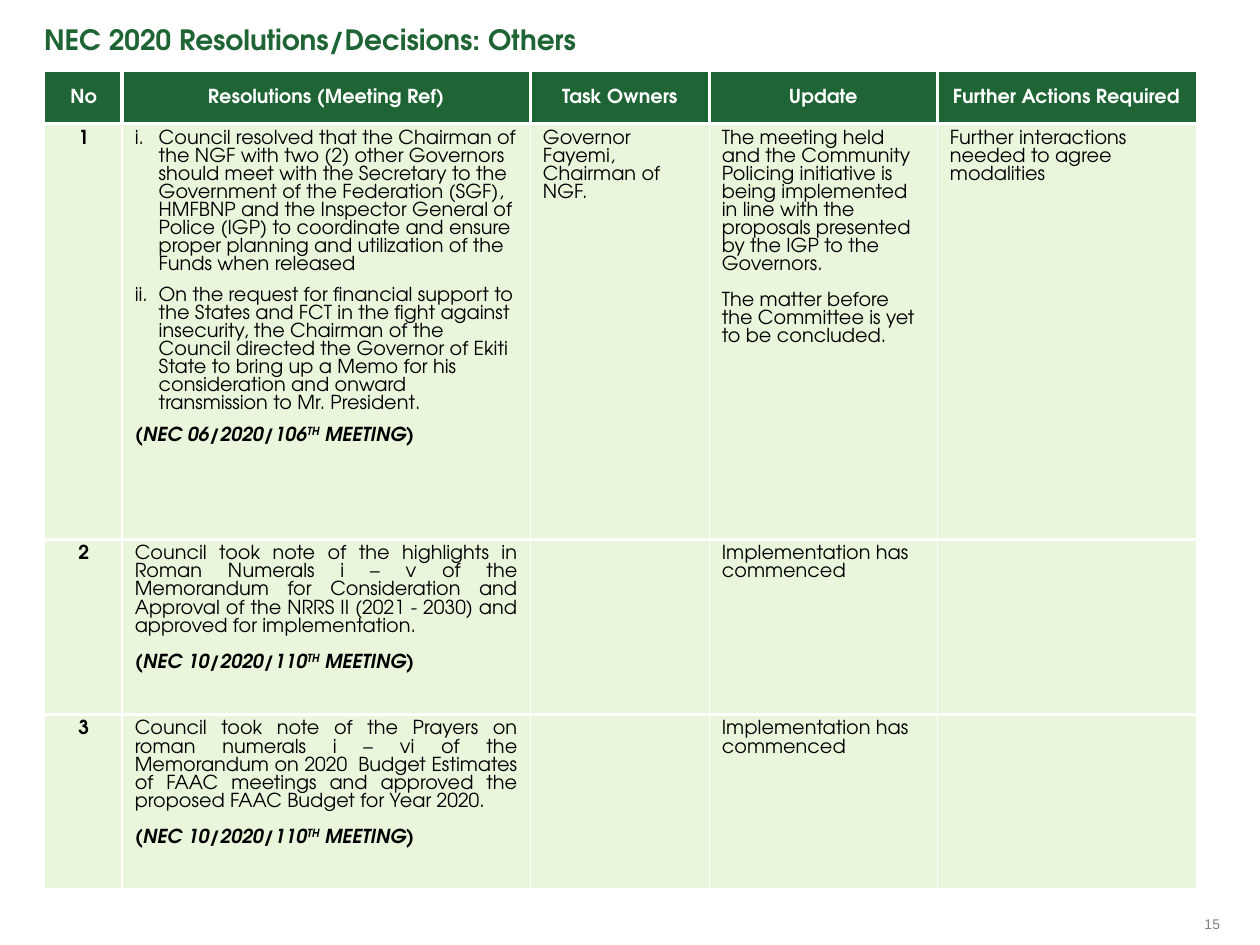
from dataclasses import dataclass

from lxml.etree import SubElement
from pptx import Presentation
from pptx.dml.color import RGBColor
from pptx.enum.text import MSO_ANCHOR, PP_ALIGN
from pptx.oxml.ns import qn
from pptx.util import Inches, Pt


@dataclass(frozen=True)
class Theme:
    font: str = "TeX Gyre Adventor"
    number_font: str = "Arial"
    green: str = "1E6434"
    pale: str = "E9F6DC"
    white: str = "FFFFFF"
    black: str = "000000"
    grey: str = "808080"
    title: float = 16
    body: float = 11
    number: float = 8
    thick: float = 2.25
    thin: float = 1


@dataclass
class Para:
    runs: list
    align: PP_ALIGN = PP_ALIGN.LEFT
    before: float = 0
    numbered: bool = False


class Deck:
    """Draws styled elements on the current slide."""

    def __init__(self, prs, theme):
        self.theme = theme
        self.s = prs.slides.add_slide(prs.slide_layouts[6])

    def run(self, p, text, size, color, font=None, bold=False, italic=False, raised=False):
        r = p.add_run()
        r.text = text
        r.font.name = font or self.theme.font
        r.font.size = Pt(size)
        r.font.bold = bold
        r.font.italic = italic
        r.font.color.rgb = RGBColor.from_string(color)
        if raised:
            r._r.get_or_add_rPr().set("baseline", "30000")

    def text(self, box, text, size, color, wrap=True, **style):
        tf = self.s.shapes.add_textbox(*map(Inches, box)).text_frame
        tf.margin_left = tf.margin_right = tf.margin_top = tf.margin_bottom = 0
        tf.word_wrap = wrap
        self.run(tf.paragraphs[0], text, size, color, **style)

    def borders(self, cell, side_width, outer):
        tcPr = cell._tc.get_or_add_tcPr()
        widths = {"L": side_width, "R": side_width, "T": self.theme.thick, "B": self.theme.thick}
        for side, width in widths.items():
            ln = SubElement(tcPr, qn(f"a:ln{side}"), w=str(Pt(width)))
            if side in outer:
                SubElement(ln, qn("a:noFill"))
            else:
                fill = SubElement(ln, qn("a:solidFill"))
                SubElement(fill, qn("a:srgbClr"), val=self.theme.white)

    def cell(self, cell, paras, header, outer):
        th = self.theme
        self.borders(cell, th.thick if header else th.thin, outer)
        cell.fill.solid()
        cell.fill.fore_color.rgb = RGBColor.from_string(th.green if header else th.pale)
        cell.vertical_anchor = MSO_ANCHOR.MIDDLE if header else MSO_ANCHOR.TOP
        tf = cell.text_frame
        for i, para in enumerate(paras):
            p = tf.add_paragraph() if i else tf.paragraphs[0]
            if para.numbered:
                pPr = p._p.get_or_add_pPr()
                pPr.set("marL", str(Inches(0.19)))
                pPr.set("indent", str(Inches(-0.19)))
                SubElement(pPr, qn("a:buAutoNum"), type="romanLcPeriod")
            p.alignment = para.align
            if para.before:
                p.space_before = Pt(para.before)
            for text, style in para.runs:
                self.run(p, text, th.body, th.white if header else th.black, **style)

    def table(self, left, top, cols, heights, rows):
        shape = self.s.shapes.add_table(
            len(rows), len(cols), Inches(left), Inches(top), Inches(sum(cols)), Inches(sum(heights))
        )
        table = shape.table
        table.horz_banding = False
        for col, width in zip(table.columns, cols):
            col.width = Inches(width)
        for i, (row, height) in enumerate(zip(rows, heights)):
            table.rows[i].height = Inches(height)
            for j, paras in enumerate(row):
                edges = {"L": j == 0, "R": j == len(cols) - 1, "T": i == 0, "B": i == len(rows) - 1}
                outer = [side for side, at_edge in edges.items() if at_edge]
                self.cell(table.cell(i, j), paras, header=i == 0, outer=outer)


def plain(text, **kw):
    return Para([(text, {})], **kw)


def heading(text):
    return [Para([(text, {"bold": True})], PP_ALIGN.CENTER)]


def meeting(ref, **kw):
    style = {"bold": True, "italic": True}
    return Para([(f"({ref}", style), ("TH", {**style, "raised": True}), (" MEETING)", style)], **kw)


def noted(text):
    return [
        plain(text, align=PP_ALIGN.JUSTIFY),
        meeting("NEC 10/2020/110", align=PP_ALIGN.JUSTIFY, before=10.3),
    ]


HEADINGS = ["No", "Resolutions (Meeting Ref)", "Task Owners", "Update", "Further Actions Required"]
COMMENCED = [plain("Implementation has commenced")]
ROWS = [
    [heading(text) for text in HEADINGS],
    [
        heading("1"),
        [
            plain(
                "Council resolved that the Chairman of the NGF with two (2) other Governors should "
                "meet with the Secretary to the Government of the Federation (SGF), HMFBNP and the "
                "Inspector General of Police (IGP) to coordinate and ensure proper planning and "
                "utilization of the Funds when released",
                numbered=True,
            ),
            plain(
                "On the request for financial support to the States and FCT in the fight against "
                "insecurity, the Chairman of the Council directed the Governor of Ekiti State to "
                "bring up a Memo for his consideration and onward transmission to Mr. President.",
                numbered=True,
                before=7.5,
            ),
            meeting("NEC 06/2020/106", before=7.5),
        ],
        [plain("Governor Fayemi, Chairman of NGF.")],
        [
            plain(
                "The meeting held and the Community Policing initiative is being implemented in "
                "line with the proposals presented by the IGP to the Governors."
            ),
            plain("The matter before the Committee is yet to be concluded.", before=10.3),
        ],
        [plain("Further interactions needed to agree modalities")],
    ],
    [
        heading("2"),
        noted(
            "Council took note of the highlights in Roman Numerals i – v of the Memorandum for "
            "Consideration and Approval of the NRRS II (2021 - 2030) and approved for implementation."
        ),
        [],
        COMMENCED,
        [],
    ],
    [
        heading("3"),
        noted(
            "Council took note of the Prayers on roman numerals i – vi of the Memorandum on 2020  "
            "Budget Estimates of FAAC meetings and approved the proposed FAAC Budget for Year 2020."
        ),
        [],
        COMMENCED,
        [],
    ],
]


def main():
    prs = Presentation()
    prs.slide_width, prs.slide_height = Inches(10), Inches(7.5)
    th = Theme()
    deck = Deck(prs, th)
    deck.text((9.56, 7.27, 0.14, 0.14), "15", th.number, th.grey, wrap=False, font=th.number_font)
    deck.table(0.36, 0.57, [0.61, 3.24, 1.42, 1.81, 2.05], [0.41, 3.3, 1.39, 1.38], ROWS)
    deck.text(
        (0.35, 0.18, 9.13, 0.27), "NEC 2020 Resolutions/Decisions: Others", th.title, th.green, bold=True
    )
    prs.save("out.pptx")


if __name__ == "__main__":
    main()
